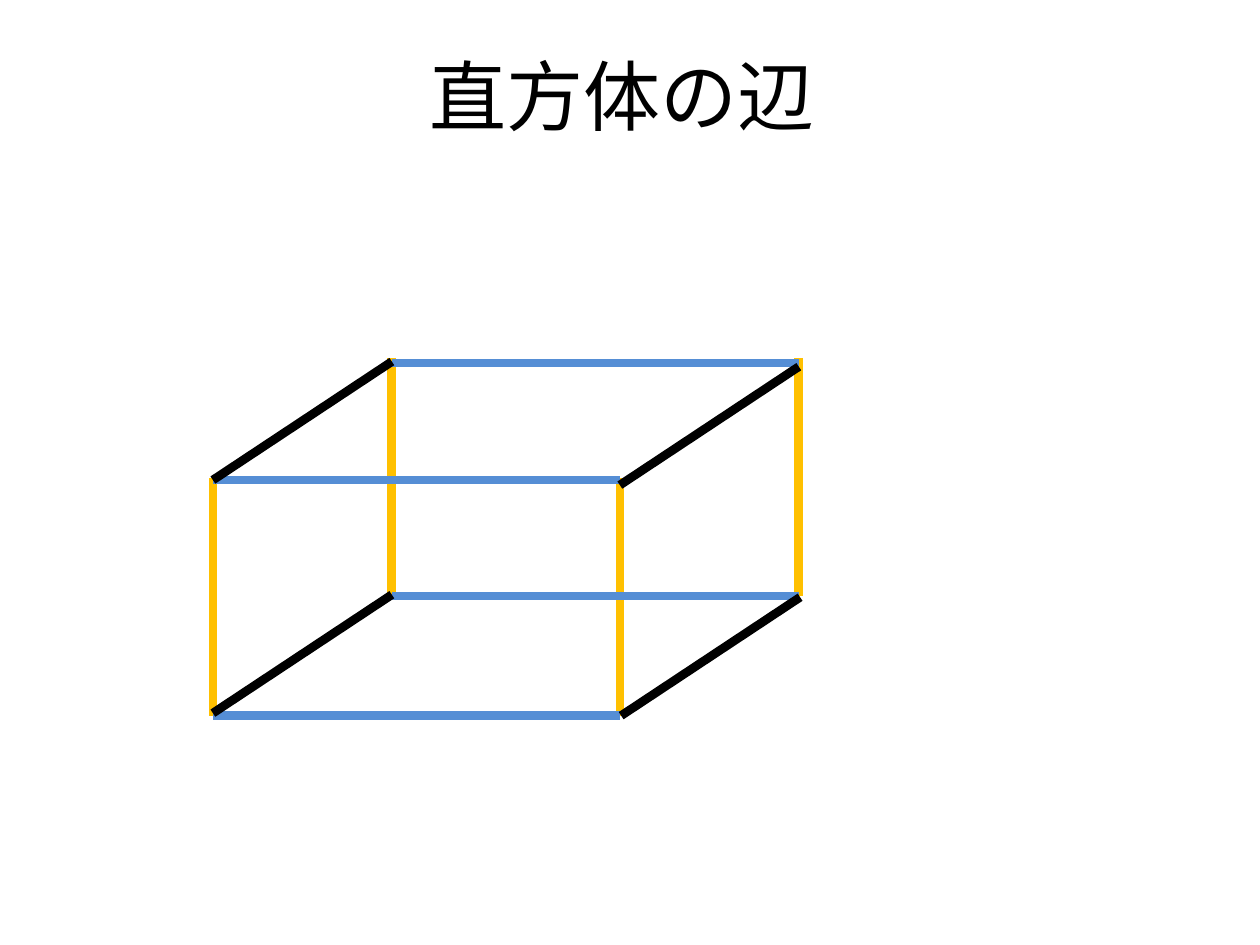
import pptx
import pptx.dml.color
import pptx.enum.shapes
import pptx.enum.text
import pptx.oxml
import pptx.oxml.ns
import pptx.util

Inches = pptx.util.Inches
RGBColor = pptx.dml.color.RGBColor

BLACK = RGBColor(0x00, 0x00, 0x00)
GOLD = RGBColor(0xFF, 0xC0, 0x00)
BLUE = RGBColor(0x55, 0x8E, 0xD5)


def write_text(tf, text, *, size, color, font="Calibri", align=pptx.enum.text.PP_ALIGN.CENTER):
    """Write one formatted paragraph into a text frame."""
    p = tf.paragraphs[0]
    p.alignment = align
    r = p.add_run()
    r.text = text
    r.font.size = pptx.util.Pt(size)
    r.font.name = font
    r.font.color.rgb = color
    ea = pptx.oxml.parse_xml(f'<a:ea {pptx.oxml.ns.nsdecls("a")} typeface="{font}"/>')
    r.font._element.append(ea)


def add_title(s, text, x, y, w, h):
    """Place the title placeholder in the given box."""
    sp = s.shapes.title
    sp.left, sp.top, sp.width, sp.height = x, y, w, h
    tf = sp.text_frame
    tf.word_wrap = True
    tf.vertical_anchor = pptx.enum.text.MSO_ANCHOR.MIDDLE
    write_text(tf, text, size=44, color=BLACK)


def add_edge(s, x1, y1, x2, y2, color):
    """Draw one thick straight edge without a shadow."""
    sp = s.shapes.add_connector(pptx.enum.shapes.MSO_CONNECTOR.STRAIGHT, x1, y1, x2, y2)
    sp.line.color.rgb = color
    sp.line.width = pptx.util.Pt(5)
    effects = pptx.oxml.parse_xml(f'<a:effectLst {pptx.oxml.ns.nsdecls("a")}/>')
    sp._element.spPr.append(effects)


def add_cuboid(s, x, y, w, h):
    """Draw the cuboid in a box as three groups of four parallel edges."""
    depth, rise, slant = Inches(1.42), Inches(0.95), Inches(0.94)
    length, height = w - depth, h - rise
    uprights = [(0, rise), (length, rise), (w, 0), (depth, 0)]
    levels = [(0, h), (depth, height), (0, rise + Inches(0.02)), (depth, Inches(0.04))]
    slants = [
        (0, rise + Inches(0.02)),
        (0, h - Inches(0.02)),
        (length + Inches(0.01), h),
        (length, rise + Inches(0.06)),
    ]
    groups = [
        (uprights, 0, height, GOLD),
        (levels, length, 0, BLUE),
        (slants, depth, -slant, BLACK),
    ]
    for starts, dx, dy, color in groups:
        for sx, sy in starts:
            add_edge(s, x + sx, y + sy, x + sx + dx, y + sy + dy, color)


def main():
    """Build and save the slide."""
    prs = pptx.Presentation()
    prs.slide_width, prs.slide_height = Inches(10), Inches(7.5)
    s = prs.slides.add_slide(prs.slide_layouts[5])
    add_title(s, "直方体の辺", Inches(0.44), Inches(0.21), Inches(8.99), Inches(1.09))
    add_cuboid(s, Inches(1.69), Inches(2.84), Inches(4.65), Inches(2.84))
    prs.save("out.pptx")


if __name__ == "__main__":
    main()
